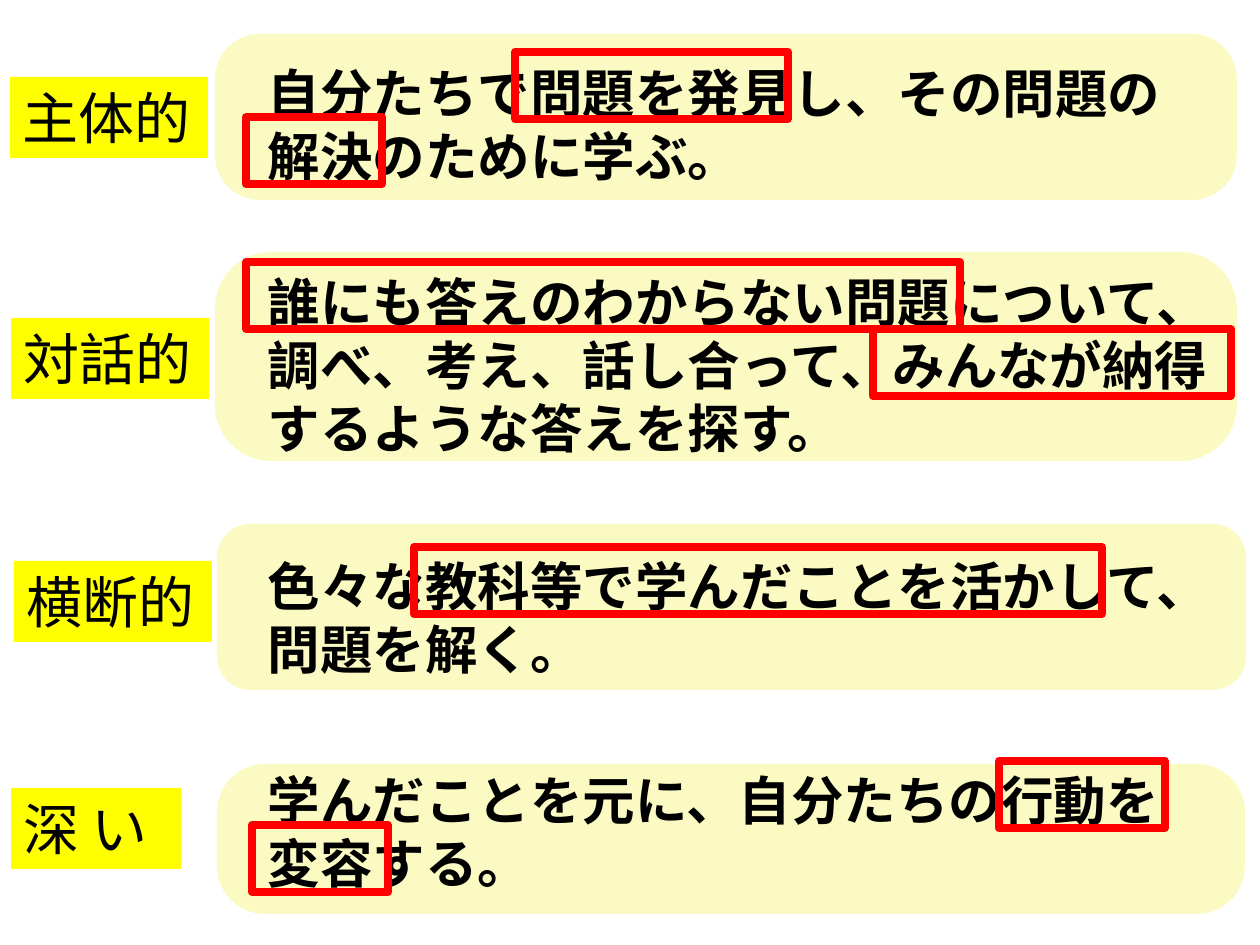
"""Build the slide on four qualities of learning, with key phrases framed in red."""
from pptx import Presentation
from pptx.dml.color import RGBColor
from pptx.enum.shapes import MSO_SHAPE
from pptx.enum.text import MSO_ANCHOR, PP_ALIGN
from pptx.util import Emu, Pt


def px(length):
    return Emu(round(length * 914400 / 126))


def block(kind, left, top, width, height, fill=None, line=None):
    shape = slide.shapes.add_shape(kind, px(left), px(top), px(width), px(height))
    shape.shadow.inherit = False
    if fill:
        shape.fill.solid()
        shape.fill.fore_color.rgb = RGBColor.from_string(fill)
    else:
        shape.fill.background()
    if line:
        shape.line.color.rgb = RGBColor.from_string(line)
        shape.line.width = Pt(4.5)
    else:
        shape.line.fill.background()
    return shape


deck = Presentation()
deck.slide_width, deck.slide_height = px(1260), px(945)
slide = deck.slides.add_slide(deck.slide_layouts[6])

panels = [
    (215, 34, 1022, 166, 0.27),
    (215, 252, 1022, 209, 0.27),
    (217, 524, 1029, 166, 0.2),
    (217, 764, 1028, 150, 0.32),
]
for left, top, width, height, rounding in panels:
    panel = block(MSO_SHAPE.ROUNDED_RECTANGLE, left, top, width, height, fill="FBFAC2")
    panel.adjustments[0] = rounding

statements = [
    (0, ["自分たちで問題を発見し、その問題の", "解決のために学ぶ。"]),
    (83, ["誰にも答えのわからない問題について、", "調べ、考え、話し合って、みんなが納得", "するような答えを探す。"]),
    (95, ["色々な教科等で学んだことを活かして、", "問題を解く。"]),
    (88, ["学んだことを元に、自分たちの行動を", "変容する。"]),
]
explanation = slide.shapes.add_textbox(px(203), px(38), px(1138), px(869)).text_frame
explanation.word_wrap = True
explanation.margin_left, explanation.margin_top = px(65), px(23)
paragraph = explanation.paragraphs[0]
for gap, lines in statements:
    for number, words in enumerate(lines):
        if paragraph.runs:
            paragraph = explanation.add_paragraph()
        paragraph.line_spacing = Pt(36)
        paragraph.space_before = px(0 if number else gap)
        run = paragraph.add_run()
        run.text = words
        run.font.name = "Calibri"
        run.font.size = Pt(30)
        run.font.bold = True
        run.font.color.rgb = RGBColor.from_string("000000")

qualities = [
    ("主体的", 10, 77, 198),
    ("対話的", 11, 318, 198),
    ("横断的", 14, 561, 198),
    ("深 い", 11, 788, 170),
]
for quality, left, top, width in qualities:
    label = block(MSO_SHAPE.RECTANGLE, left, top, width, 81, fill="FFFF00").text_frame
    label.vertical_anchor = MSO_ANCHOR.MIDDLE
    label.word_wrap = True
    label.paragraphs[0].alignment = PP_ALIGN.LEFT
    run = label.paragraphs[0].add_run()
    run.text = quality
    run.font.name = "Noto Sans CJK JP"
    run.font.size = Pt(32)
    run.font.color.rgb = RGBColor.from_string("000000")

key_phrases = [
    (515, 52, 273),
    (246, 117, 136),
    (246, 262, 714),
    (873, 329, 358),
    (414, 547, 688),
    (252, 825, 136),
    (999, 761, 166),
]
for left, top, width in key_phrases:
    block(MSO_SHAPE.RECTANGLE, left, top, width, 67, line="FF0000")

deck.save("out.pptx")
